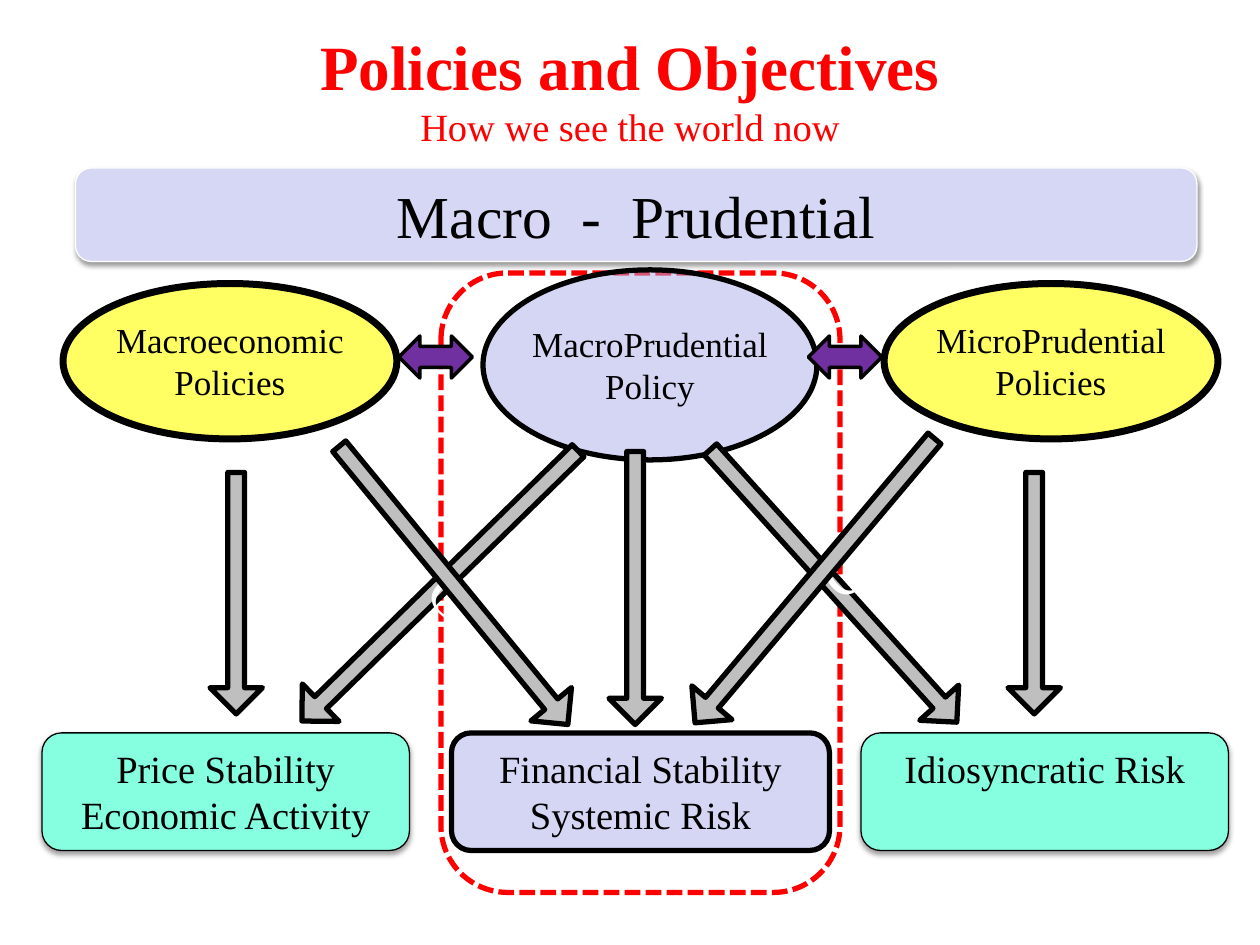
from lxml import etree
from pptx import Presentation
from pptx.dml.color import RGBColor
from pptx.enum.dml import MSO_LINE
from pptx.enum.shapes import MSO_SHAPE
from pptx.enum.text import MSO_ANCHOR, PP_ALIGN
from pptx.oxml import parse_xml
from pptx.oxml.ns import nsdecls, qn
from pptx.util import Inches, Pt

ROUND, OVAL = MSO_SHAPE.ROUNDED_RECTANGLE, MSO_SHAPE.OVAL
DOWN, BOTH = MSO_SHAPE.DOWN_ARROW, MSO_SHAPE.LEFT_RIGHT_ARROW
DASH, CENTER = MSO_LINE.SQUARE_DOT, PP_ALIGN.CENTER
TOP, MIDDLE = MSO_ANCHOR.TOP, MSO_ANCHOR.MIDDLE
BLACK, WHITE = RGBColor(0, 0, 0), RGBColor(255, 255, 255)
RED, YELLOW = RGBColor(255, 0, 0), RGBColor(255, 255, 0)
PALE, LILAC = RGBColor(0xD6, 0xD6, 0xF5), RGBColor(0xAD, 0xAD, 0xEB)
MINT, GRAY = RGBColor(0x85, 0xFF, 0xE0), RGBColor(0xBF, 0xBF, 0xBF)
PURPLE = RGBColor(0x70, 0x30, 0xA0)
FONT = "Times New Roman"
COLS, ROWS = 120, 90
SHADE = (
    f'<a:effectLst {nsdecls("a")}><a:outerShdw blurRad="{Pt(3.1)}" dist="{Pt(1.6)}" '
    'dir="5400000" rotWithShape="0"><a:srgbClr val="000000"><a:alpha val="38000"/>'
    '</a:srgbClr></a:outerShdw></a:effectLst>'
)

deck = Presentation()
deck.slide_width, deck.slide_height = Inches(10), Inches(7.5)
col, row = deck.slide_width / COLS, deck.slide_height / ROWS
slide = deck.slides.add_slide(deck.slide_layouts[5])


def put(kind, box, fill, line, width, alpha=None, shade=False):
    x, y, w, h = box
    shape = slide.shapes.add_shape(
        kind, round(x * col), round(y * row), round(w * col), round(h * row))
    shape.shadow.inherit = False
    if fill is None:
        shape.fill.background()
    else:
        shape.fill.solid()
        shape.fill.fore_color.rgb = fill
    if alpha:
        tint = shape.fill._xPr.find(qn("a:solidFill"))[0]
        etree.SubElement(tint, qn("a:alpha")).set("val", str(alpha * 1000))
    if shade:
        props = shape._element.spPr
        props.replace(props.find(qn("a:effectLst")), parse_xml(SHADE))
    shape.line.color.rgb = line
    shape.line.width = Pt(width)
    return shape


def write(shape, lines, anchor=TOP, inset=None):
    frame = shape.text_frame
    frame.word_wrap = True
    frame.vertical_anchor = anchor
    if inset is not None:
        frame.margin_left = frame.margin_right = 0
        frame.margin_top = frame.margin_bottom = Inches(inset)
    for i, (text, size, color, bold) in enumerate(lines):
        para = frame.paragraphs[0] if i == 0 else frame.add_paragraph()
        para.alignment = CENTER
        para.space_before = Pt(0)
        run = para.add_run()
        run.text = text
        run.font.name, run.font.size = FONT, Pt(size)
        run.font.bold, run.font.color.rgb = bold, color


title = slide.shapes.title
title.left, title.top = 0, round(2 * row)
title.width, title.height = deck.slide_width, round(13 * row)
write(title, [("Policies and Objectives", 36, RED, True),
              ("How we see the world now", 22, RED, False)], TOP)

frame = put(ROUND, (42, 26, 38, 59), None, RED, 3)
frame.line.dash_style = DASH

bar = put(ROUND, (7.2, 16, 106.8, 8.9), PALE, WHITE, 0.75, shade=True)
write(bar, [("Macro  -  Prudential", 34, BLACK, False)])

for x, head in ((6, "Macroeconomic"), (84.2, "MicroPrudential")):
    oval = put(OVAL, (x, 27, 31.8, 14.8), YELLOW, BLACK, 4, alpha=61)
    write(oval, [(t, 20, BLACK, False) for t in (head, "Policies")], TOP, 0.1)

for x, goals in ((4, ("Price Stability", "Economic Activity")),
                 (82, ("Idiosyncratic Risk",))):
    goal = put(ROUND, (x, 69.8, 35, 11.2), MINT, BLACK, 0.75, shade=True)
    write(goal, [(t, 22, BLACK, False) for t in goals])

core = put(OVAL, (46, 25.7, 31.8, 18.1), LILAC, BLACK, 3, alpha=51)
write(core, [(t, 20, BLACK, False) for t in ("MacroPrudential", "Policy")], MIDDLE, 0.2)

goal = put(ROUND, (43, 69.8, 36, 11.2), LILAC, BLACK, 3, alpha=51)
write(goal, [(t, 22, BLACK, False) for t in ("Financial Stability", "Systemic Risk")])

for x in (77, 38):
    put(BOTH, (x, 32, 7, 4), PURPLE, BLACK, 2)

for x, y, length, turn, mark in (
    (20, 45, 23, 0, ""),
    (96, 45, 23, 0, ""),
    (39.4, 37.4, 36.8, 45.6, "C"),
    (40.7, 38.6, 34.3, 320.6, ""),
    (76.9, 38.3, 35, 317.9, "C"),
    (75.1, 37.6, 35.4, 40.1, ""),
    (58, 43, 26, 0, ""),
):
    arrow = put(DOWN, (x, y, 5, length), GRAY, BLACK, 3)
    arrow.adjustments[0], arrow.adjustments[1] = 0.32, 0.5
    arrow.rotation = turn
    if mark:
        write(arrow, [(mark, 34, WHITE, False)], MIDDLE)

deck.save("out.pptx")
